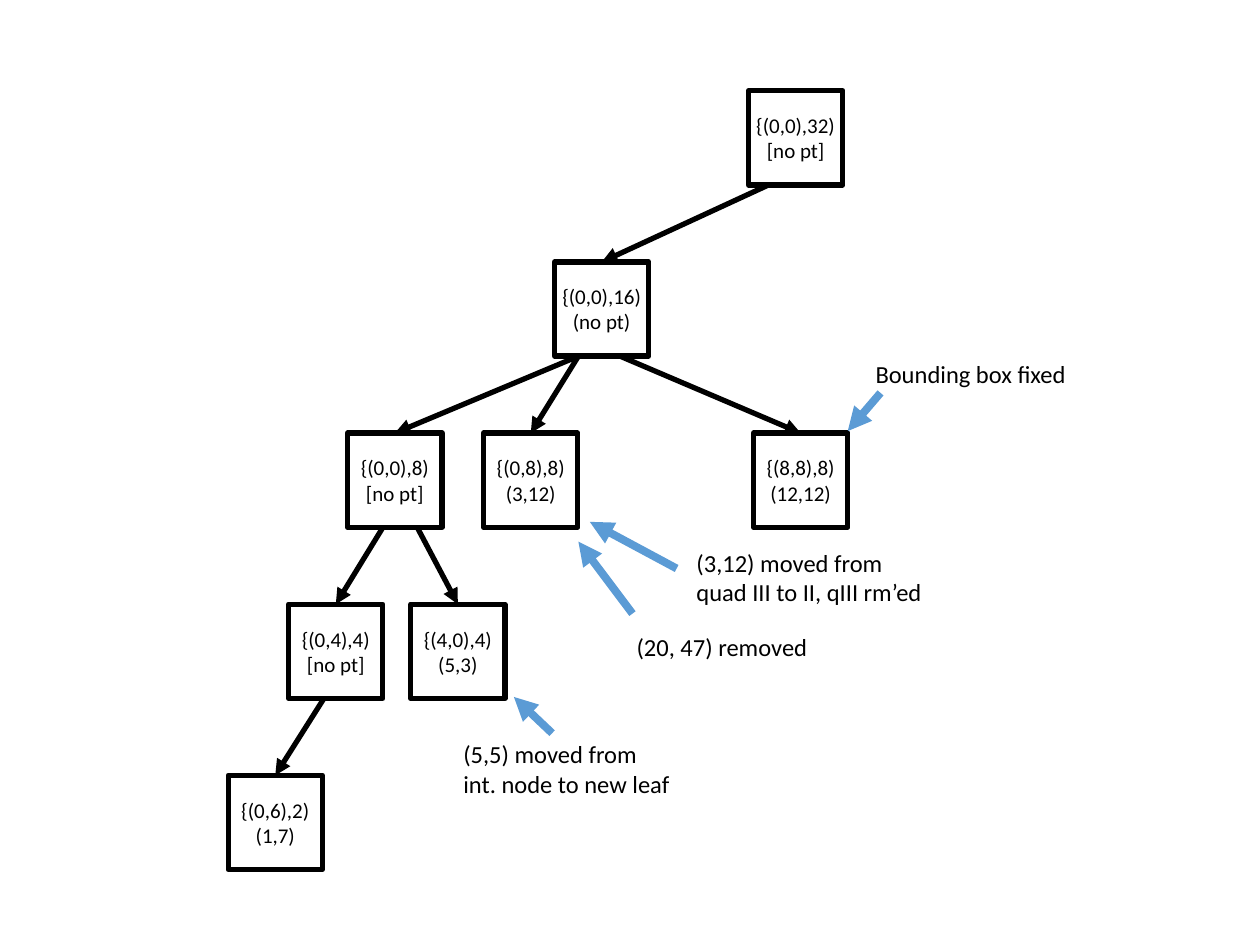
from dataclasses import dataclass
from typing import Any

from lxml import etree
from pptx import Presentation
from pptx import util as u
from pptx.dml.color import RGBColor
from pptx.enum import shapes, text
from pptx.oxml.ns import qn

COLORS = {"ink": "000000", "paper": "FFFFFF", "accent": "5B9BD5"}
SIDE, FIRST_ROW, ROW_PITCH = 1.9, 1.83, 3.45
NODE_FRAME = {"margin_left": 0, "margin_top": 0, "margin_right": 0, "margin_bottom": 0,
              "word_wrap": True, "vertical_anchor": text.MSO_ANCHOR.MIDDLE}
NOTE_FRAME = {"word_wrap": False, "auto_size": text.MSO_AUTO_SIZE.SHAPE_TO_FIT_TEXT}

NODES = {
    "root": (15.09, 0, "{(0,0),32)\v[no pt]"),
    "size16": (11.18, 1, "{(0,0),16)\v(no pt)"),
    "size8": (7.01, 2, "{(0,0),8)\v[no pt]"),
    "moved": (9.75, 2, "{(0,8),8)\v(3,12)"),
    "fixed": (15.19, 2, "{(8,8),8)\v(12,12)"),
    "size4": (5.82, 3, "{(0,4),4)\v[no pt]"),
    "new_leaf": (8.28, 3, "{(4,0),4)\v(5,3)"),
    "size2": (4.6, 4, "{(0,6),2)\v(1,7)"),
}
BRANCHES = [
    ("root", 15.49, "size16"),
    ("size16", 11.66, "size8"),
    ("size16", 12.5, "fixed"),
    ("size16", 11.66, "moved"),
    ("size8", 7.72, "size4"),
    ("size4", 6.53, "size2"),
    ("size8", 8.41, "new_leaf"),
]
NOTES = [
    ((17.4, 7.11, 4.39, 0.86), "Bounding box fixed", "LEFT"),
    ((13.79, 10.92, 5.08, 1.45), "(3,12) moved from\nquad III to II, qIII rm’ed", "LEFT"),
    ((12.5, 12.62, 4.11, 0.86), "(20, 47) removed", "CENTER"),
    ((9.09, 14.78, 4.7, 1.45), "(5,5) moved from\vint. node to new leaf", "LEFT"),
]
POINTERS = [
    (17.75, 7.92, 17.09, 8.69),
    (13.64, 11.46, 11.89, 10.52),
    (12.75, 12.37, 11.66, 10.92),
    (11.13, 14.78, 10.36, 14.05),
]


@dataclass
class TreeSlide:
    """Draws quadtree nodes, branches and notes on one slide."""

    slide: Any
    font: str = "Calibri"
    node_size: int = 12
    note_size: int = 14

    def color(self, name):
        return RGBColor.from_string(COLORS[name])

    def label(self, frame, words, size, align, layout):
        for name, value in layout.items():
            setattr(frame, name, value)
        frame.text = words
        for paragraph in frame.paragraphs:
            paragraph.alignment = text.PP_ALIGN[align]
            for run in paragraph.runs:
                for name, value in {"name": self.font, "size": u.Pt(size)}.items():
                    setattr(run.font, name, value)
                run.font.color.rgb = self.color("ink")

    def node(self, left, row, words):
        box = self.slide.shapes.add_shape(
            shapes.MSO_SHAPE.RECTANGLE,
            u.Cm(left), u.Cm(FIRST_ROW + row * ROW_PITCH), u.Cm(SIDE), u.Cm(SIDE))
        box.shadow.inherit = False
        box.fill.solid()
        box.fill.fore_color.rgb = self.color("paper")
        box.line.color.rgb = self.color("ink")
        box.line.width = u.Pt(3)
        self.label(box.text_frame, words, self.node_size, "CENTER", NODE_FRAME)
        return box

    def arrow(self, ends, color, width):
        arrow = self.slide.shapes.add_connector(shapes.MSO_CONNECTOR.STRAIGHT, *ends)
        arrow.line.color.rgb = self.color(color)
        arrow.line.width = u.Pt(width)
        properties = arrow._element.spPr
        etree.SubElement(properties.find(qn("a:ln")), qn("a:tailEnd"), type="triangle")
        etree.SubElement(properties, qn("a:effectLst"))
        return arrow

    def branch(self, parent, start, child):
        bottom = parent.top + parent.height
        arrow = self.arrow((u.Cm(start), bottom, child.left, child.top), "ink", 3)
        arrow.end_connect(child, 0)

    def pointer(self, *ends):
        self.arrow(map(u.Cm, ends), "accent", 4.5)

    def note(self, place, words, align):
        box = self.slide.shapes.add_textbox(*map(u.Cm, place))
        self.label(box.text_frame, words, self.note_size, align, NOTE_FRAME)


def main():
    deck = Presentation()
    deck.slide_width, deck.slide_height = u.Cm(25.4), u.Cm(19.05)
    tree = TreeSlide(deck.slides.add_slide(deck.slide_layouts[6]))
    nodes = {name: tree.node(*node) for name, node in NODES.items()}
    for parent, start, child in BRANCHES:
        tree.branch(nodes[parent], start, nodes[child])
    for note in NOTES:
        tree.note(*note)
    for pointer in POINTERS:
        tree.pointer(*pointer)
    deck.save("out.pptx")


if __name__ == "__main__":
    main()
